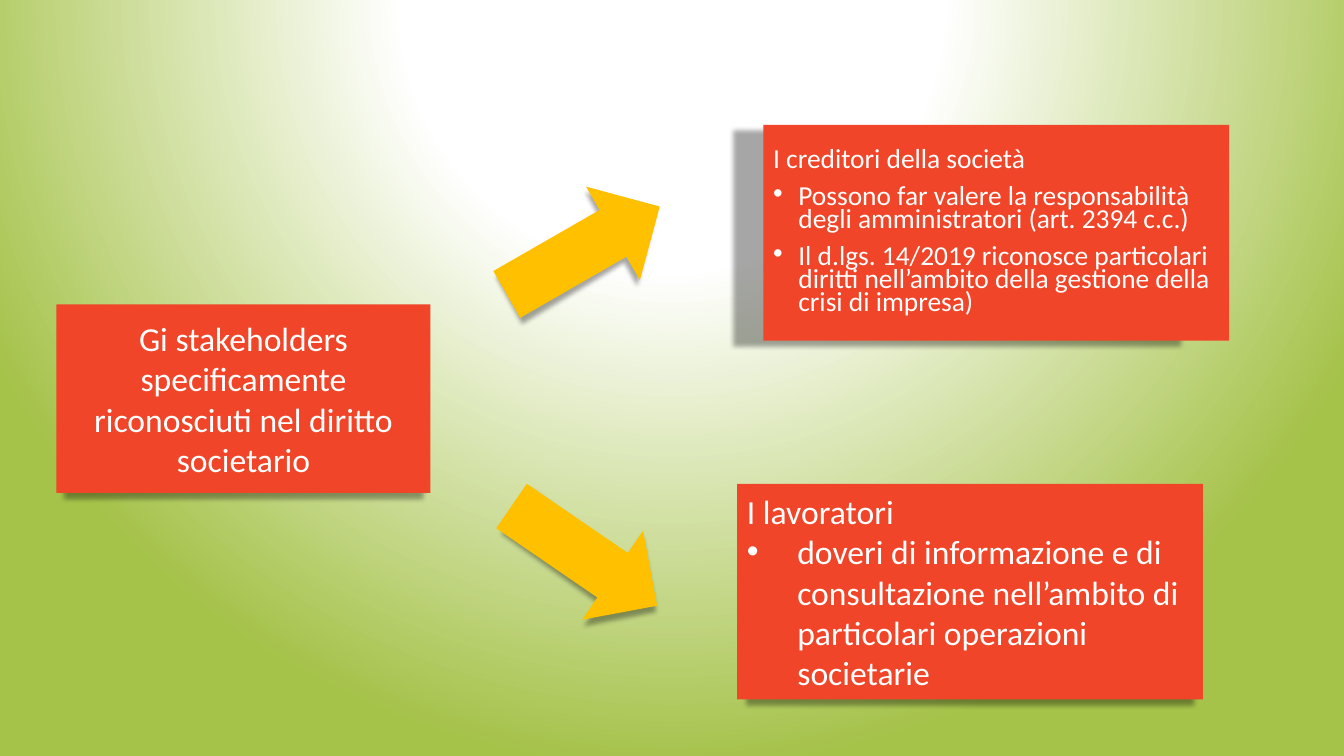
from pptx import Presentation, oxml, util as u
from pptx.dml.color import RGBColor
from pptx.enum import shapes, text
from pptx.oxml import ns

WIDTH, HEIGHT = 13.33, 7.5
RED, AMBER, WHITE, GREEN = "F04528", "FFC000", "FFFFFF", "A5C249"
BOX_SIZE = (4.62, 2.14)
ARROW_SIZE = (1.75, 1.07)


def rgb(value):
    return RGBColor.from_string(value)


def paint_background(slide):
    """Radial gradient centred above the slide."""
    stops = "".join(
        f'<a:gs pos="{share * 1000}"><a:srgbClr val="{colour}"/></a:gs>'
        for share, colour in ((0, WHITE), (35, WHITE), (100, GREEN)))
    slide.background.fill.gradient()
    old_fill = slide.element.find(".//" + ns.qn("a:gradFill"))
    old_fill.getparent().replace(old_fill, oxml.parse_xml(
        f'<a:gradFill {ns.nsdecls("a")} rotWithShape="1"><a:gsLst>{stops}</a:gsLst>'
        '<a:path path="circle"><a:fillToRect l="50000" t="-80000" r="50000" b="180000"/>'
        '</a:path></a:gradFill>'))


def add_shadow(shape, distance=4, direction=90):
    """Soft shadow, slightly narrower than its shape; distance in points."""
    shape.shadow.inherit = False
    effects = shape.element.spPr.find(ns.qn("a:effectLst"))
    effects.append(oxml.parse_xml(
        f'<a:outerShdw {ns.nsdecls("a")} blurRad="{u.Pt(3.5)}" dist="{u.Pt(distance)}" '
        f'dir="{direction * 60000}" sx="96000" algn="ctr" rotWithShape="0">'
        '<a:srgbClr val="000000"><a:alpha val="34000"/></a:srgbClr></a:outerShdw>'))


def add_block(slide, kind, position, size, fill, rotation=0, **shadow):
    block = slide.shapes.add_shape(kind, *(u.Inches(v) for v in position + size))
    block.fill.solid()
    block.fill.fore_color.rgb = rgb(fill)
    block.line.fill.background()
    block.rotation = rotation
    add_shadow(block, **shadow)
    return block


def write(block, heading, bullets=(), size=24, align=text.PP_ALIGN.LEFT,
          indent=0.5, line_spacing=None, space_before=0):
    frame = block.text_frame
    frame.word_wrap = True
    frame.vertical_anchor = text.MSO_ANCHOR.MIDDLE
    for index, words in enumerate((heading, *bullets)):
        paragraph = frame.add_paragraph() if index else frame.paragraphs[0]
        paragraph.alignment = text.PP_ALIGN.LEFT if index else align
        paragraph.line_spacing = line_spacing
        paragraph.space_before = u.Pt(space_before)
        run = paragraph.add_run()
        run.text = words
        run.font.name, run.font.size = "Calibri", u.Pt(size)
        run.font.color.rgb = rgb(WHITE)
        if index:
            add_bullet(paragraph, indent)


def add_bullet(paragraph, indent):
    properties = paragraph._p.get_or_add_pPr()
    properties.set("marL", str(u.Inches(indent)))
    properties.set("indent", str(-u.Inches(indent)))
    for tag in ('buFont {} typeface="Arial"', 'buChar {} char="•"'):
        properties.append(oxml.parse_xml(f'<a:{tag.format(ns.nsdecls("a"))}/>'))


def main():
    deck = Presentation()
    deck.slide_width, deck.slide_height = u.Inches(WIDTH), u.Inches(HEIGHT)
    slide = deck.slides.add_slide(deck.slide_layouts[6])
    paint_background(slide)
    rectangle = shapes.MSO_SHAPE.RECTANGLE

    # Starting topic
    stakeholders = add_block(slide, rectangle, (0.56, 3.02), (3.71, 1.87), RED)
    write(stakeholders, "Gi stakeholders specificamente riconosciuti nel diritto societario",
          align=text.PP_ALIGN.CENTER)

    # Creditors, with the shadow cast to the left
    creditors = add_block(slide, rectangle, (7.57, 1.24), BOX_SIZE, RED,
                          distance=28, direction=172)
    write(creditors, "I creditori della società", (
        "Possono far valere la responsabilità degli amministratori (art. 2394 c.c.)",
        "Il d.lgs. 14/2019 riconosce particolari diritti nell’ambito della gestione "
        "della crisi di impresa)",
    ), size=19.6, indent=0.25, line_spacing=0.7, space_before=10)

    # Workers
    workers = add_block(slide, rectangle, (7.31, 4.8), BOX_SIZE, RED)
    write(workers, "I lavoratori ", (
        "doveri di informazione e di consultazione nell’ambito di particolari "
        "operazioni societarie",
    ), align=text.PP_ALIGN.JUSTIFY)

    # Arrows from the topic to each group
    for position, rotation in (((4.91, 1.95), 330.1), ((4.92, 4.98), 34.4)):
        add_block(slide, shapes.MSO_SHAPE.RIGHT_ARROW, position, ARROW_SIZE, AMBER, rotation)

    deck.save("out.pptx")


if __name__ == "__main__":
    main()
